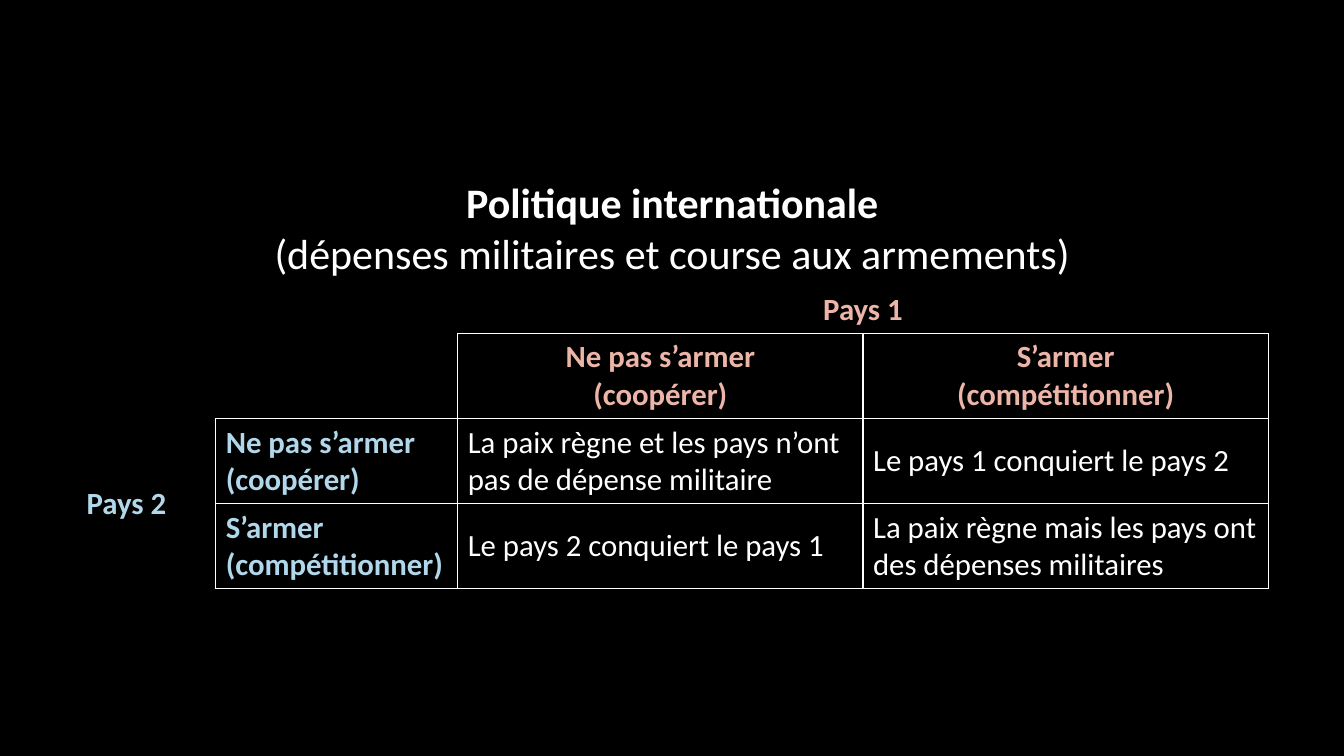
from lxml.etree import SubElement
from pptx import Presentation
from pptx.dml.color import RGBColor
from pptx.enum.text import MSO_ANCHOR, PP_ALIGN
from pptx.oxml.ns import qn
from pptx.util import Inches, Pt

WHITE, PINK, BLUE = "FFFFFF", "ECB5A8", "B1D7EB"
COLUMN_WIDTHS = [1.38, 2.4, 4.02, 4.02]
ROW_HEIGHTS = [1.1, 0.47, 0.84, 0.84, 0.84]
EDGES = {"L": (0, -1), "R": (0, 1), "T": (-1, 0), "B": (1, 0)}
COOPERATE = ["Ne pas s’armer", "(coopérer)"]
COMPETE = ["S’armer", "(compétitionner)"]
OUTCOMES = [
    ["La paix règne et les pays n’ont pas de dépense militaire",
     "Le pays 1 conquiert le pays 2"],
    ["Le pays 2 conquiert le pays 1",
     "La paix règne mais les pays ont des dépenses militaires"],
]


def color(value):
    return RGBColor.from_string(value)


def is_framed(row, column):
    """Strategy labels and outcomes have a frame, the corner has none."""
    return (2 <= row < len(ROW_HEIGHTS) and 1 <= column < len(COLUMN_WIDTHS)
            and (row, column) != (2, 1))


def style_cell(table, row, column):
    cell = table.cell(row, column)
    cell.vertical_anchor = MSO_ANCHOR.MIDDLE
    properties = cell._tc.get_or_add_tcPr()
    for side, (down, right) in EDGES.items():
        line = SubElement(properties, qn(f"a:ln{side}"), w=str(Pt(1)))
        if is_framed(row, column) or is_framed(row + down, column + right):
            fill = SubElement(line, qn("a:solidFill"))
            SubElement(fill, qn("a:srgbClr"), val=WHITE)
        else:
            SubElement(line, qn("a:noFill"))
    cell.fill.background()


def write(cell, lines, fill=WHITE, size=22, bold=True, align=PP_ALIGN.LEFT):
    cell.text = "\n".join(lines)
    for para in cell.text_frame.paragraphs:
        para.alignment = align
        para.font.name = "Calibri"
        para.font.size = Pt(size)
        para.font.bold = bold
        para.font.color.rgb = color(fill)


def add_grid(page):
    frame = page.shapes.add_table(
        len(ROW_HEIGHTS), len(COLUMN_WIDTHS), Inches(0.76), Inches(1.72),
        Inches(sum(COLUMN_WIDTHS)), Inches(sum(ROW_HEIGHTS)))
    table = frame.table
    table.first_row = table.horz_banding = False
    for column, width in zip(table.columns, COLUMN_WIDTHS):
        column.width = Inches(width)
    for row, height in zip(table.rows, ROW_HEIGHTS):
        row.height = Inches(height)
    for row in range(len(ROW_HEIGHTS)):
        for column in range(len(COLUMN_WIDTHS)):
            style_cell(table, row, column)
    for first, last in [((0, 0), (0, 3)), ((1, 2), (1, 3)), ((3, 0), (4, 0))]:
        table.cell(*first).merge(table.cell(*last))
    return table


def main():
    deck = Presentation()
    deck.slide_width, deck.slide_height = Inches(13.33), Inches(7.5)
    page = deck.slides.add_slide(deck.slide_layouts[6])
    page.background.fill.solid()
    page.background.fill.fore_color.rgb = color("000000")

    table = add_grid(page)

    # Title
    title = table.cell(0, 0)
    write(title, ["Politique internationale",
                  "(dépenses militaires et course aux armements)"],
          size=30, align=PP_ALIGN.CENTER)
    title.text_frame.paragraphs[1].font.bold = False

    # Players
    write(table.cell(1, 2), ["Pays 1"], PINK, align=PP_ALIGN.CENTER)
    write(table.cell(3, 0), ["Pays 2"], BLUE)

    # Strategies and outcomes
    for index, strategy in enumerate([COOPERATE, COMPETE]):
        write(table.cell(2, 2 + index), strategy, PINK, align=PP_ALIGN.CENTER)
        write(table.cell(3 + index, 1), strategy, BLUE)
        for column, outcome in enumerate(OUTCOMES[index], start=2):
            write(table.cell(3 + index, column), [outcome], bold=False)

    deck.save("out.pptx")


if __name__ == "__main__":
    main()
